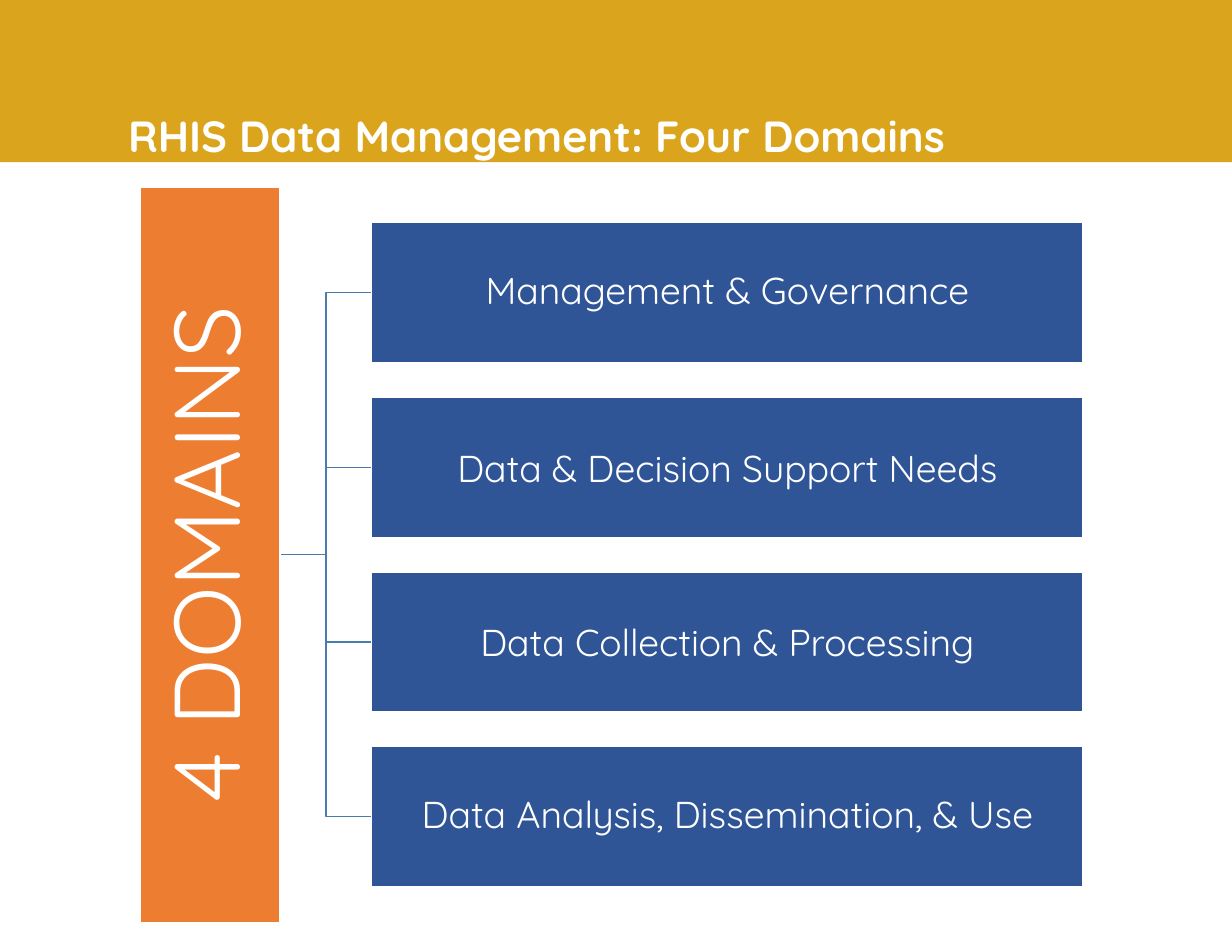
"""Build the slide on the four domains of RHIS data management."""
from dataclasses import dataclass

import pptx
import pptx.dml.color
import pptx.enum.shapes
import pptx.enum.text
import pptx.oxml.ns
import pptx.util
from lxml import etree

Cm = pptx.util.Cm
Pt = pptx.util.Pt


@dataclass(frozen=True)
class Theme:
    font: str = "Quicksand"
    gold: str = "DAA51C"
    orange: str = "ED7D31"
    blue: str = "2F5597"
    line: str = "497CAB"
    white: str = "FFFFFF"
    title: int = 28
    side: int = 60
    row: int = 24


THEME = Theme()
ROWS = [
    ("Management & Governance", 0.9),
    ("Data & Decision Support Needs", 1.0),
    ("Data Collection & Processing", 1.0),
    ("Data Analysis, Dissemination, & Use", 0.9),
]
LEFT, TOP, WIDTH, HEIGHT, STEP = 8.43, 5.05, 16.13, 3.18, 3.96
SIDE_MID, SIDE_LONG = 4.76, 16.69


def color(code):
    return pptx.dml.color.RGBColor.from_string(code)


def write(shape, text, size, inset, pace=1.0, bold=False):
    frame = shape.text_frame
    frame.word_wrap = True
    frame.auto_size = pptx.enum.text.MSO_AUTO_SIZE.NONE
    frame.vertical_anchor = pptx.enum.text.MSO_ANCHOR.MIDDLE
    frame.margin_left = frame.margin_right = Cm(inset)
    frame.margin_top = frame.margin_bottom = Cm(inset)
    para = frame.paragraphs[0]
    para.alignment = pptx.enum.text.PP_ALIGN.CENTER
    para.line_spacing = pace
    run = para.add_run()
    run.text = text
    run.font.name = THEME.font
    run.font.size = Pt(size)
    run.font.bold = bold
    run.font.color.rgb = color(THEME.white)


def block(slide, left, top, width, height, fill, edge=None):
    kind = pptx.enum.shapes.MSO_SHAPE.RECTANGLE
    shape = slide.shapes.add_shape(kind, Cm(left), Cm(top), Cm(width), Cm(height))
    shape.shadow.inherit = False
    shape.fill.solid()
    shape.fill.fore_color.rgb = color(fill)
    if edge:
        shape.line.color.rgb = color(edge)
        shape.line.width = Pt(1)
    else:
        shape.line.fill.background()
    return shape


def branch(slide, x1, y1, x2, y2):
    straight = abs(y2 - y1) < 0.01
    kinds = pptx.enum.shapes.MSO_CONNECTOR
    kind = kinds.STRAIGHT if straight else kinds.ELBOW
    link = slide.shapes.add_connector(kind, Cm(x1), Cm(y1), Cm(x2), Cm(y2))
    link.line.color.rgb = color(THEME.line)
    link.line.width = Pt(1)
    etree.SubElement(link.element.spPr, pptx.oxml.ns.qn("a:effectLst"))


def header(slide, text):
    band = block(slide, 0, 0, 27.94, 3.68, THEME.gold)
    title = slide.shapes.title
    band.element.addnext(title.element)
    title.left, title.top = Cm(-1.27), Cm(0.1)
    title.width, title.height = Cm(26.87), Cm(3.55)
    write(title, text, THEME.title, 0, bold=True)
    title.text_frame.vertical_anchor = pptx.enum.text.MSO_ANCHOR.BOTTOM


def side(slide, text, mid):
    left, top = SIDE_MID - SIDE_LONG / 2, mid - HEIGHT / 2
    bar = block(slide, left, top, SIDE_LONG, HEIGHT, THEME.orange, THEME.white)
    bar.rotation = 270
    write(bar, text, THEME.side, 0.1, 0.9)


def main():
    deck = pptx.Presentation()
    deck.slide_width, deck.slide_height = Cm(27.94), Cm(21.59)
    slide = deck.slides.add_slide(deck.slide_layouts.get_by_name("Title Only"))
    header(slide, "RHIS Data Management: Four Domains")

    tops = [TOP + i * STEP for i in range(len(ROWS))]
    hub = (tops[0] + tops[-1] + HEIGHT) / 2
    for top in tops:
        branch(slide, SIDE_MID + HEIGHT / 2, hub, LEFT, top + HEIGHT / 2)
    side(slide, "4 DOMAINS", hub)
    for top, (text, pace) in zip(tops, ROWS):
        row = block(slide, LEFT, top, WIDTH, HEIGHT, THEME.blue, THEME.white)
        write(row, text, THEME.row, 0.05, pace)
    deck.save("out.pptx")


if __name__ == "__main__":
    main()
